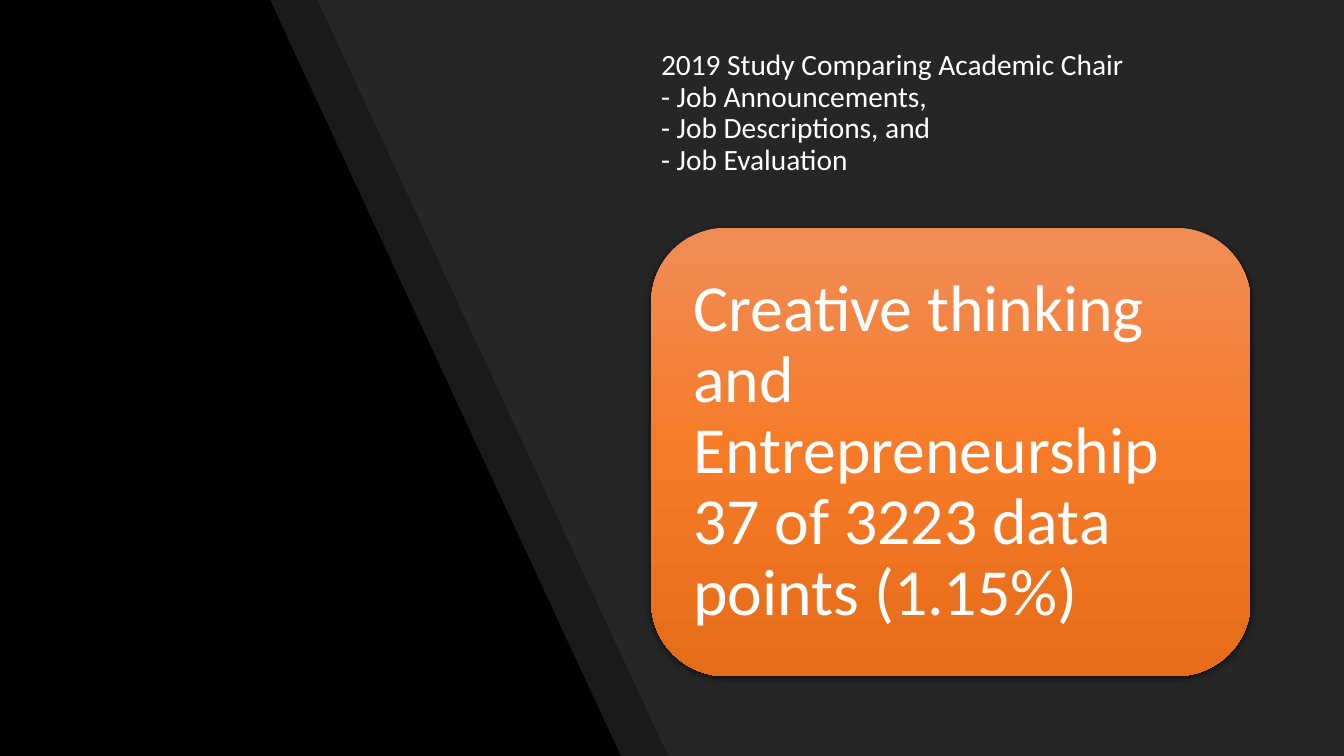
from lxml import etree
from pptx import Presentation
from pptx.dml.color import RGBColor
from pptx.enum.shapes import MSO_SHAPE
from pptx.enum.text import MSO_ANCHOR, PP_ALIGN
from pptx.oxml.ns import qn
from pptx.util import Cm, Pt

ROUNDED = MSO_SHAPE.ROUNDED_RECTANGLE
MIDDLE, LEFT = MSO_ANCHOR.MIDDLE, PP_ALIGN.LEFT

TITLE = [
    "2019 Study Comparing Academic Chair",
    "- Job Announcements,",
    "- Job Descriptions, and",
    "- Job Evaluation",
]
FINDING = [
    "Creative thinking and Entrepreneurship",
    "37 of 3223 data points (1.15%)",
]
FONT, WHITE, BLACK, PANEL = "Calibri", "FFFFFF", "000000", "262626"
CARD_STOPS = [(0, "F18C57"), (50, "F67B28"), (100, "E56C19")]

# Slanted panels: top-left x in cm, opacity in percent
PANELS = [(6.81, 70), (8.0, 100)]
SLANT = 8.84
WIDTH, HEIGHT = 33.87, 19.05
COLUMN_LEFT, COLUMN_WIDTH = 16.41, 15.11


def rgb(color):
    return RGBColor.from_string(color)


def add_xml(parent, tag, **attrs):
    return etree.SubElement(parent, qn(tag), {k: str(v) for k, v in attrs.items()})


def add_panel(slide, left, opacity):
    corners = [(left, 0), (WIDTH, 0), (WIDTH, HEIGHT), (left + SLANT, HEIGHT)]
    points = [(Cm(x), Cm(y)) for x, y in corners]
    builder = slide.shapes.build_freeform(*points[0])
    builder.add_line_segments(points[1:], close=True)
    sp = builder.convert_to_shape()
    sp.shadow.inherit = False
    sp.line.fill.background()
    sp.fill.solid()
    sp.fill.fore_color.rgb = rgb(PANEL)
    if opacity < 100:
        color = sp._element.spPr.find(f"{qn('a:solidFill')}/{qn('a:srgbClr')}")
        add_xml(color, "a:alpha", val=opacity * 1000)


def set_text(sp, lines, size, inset_x, inset_y):
    """Fill the shape with one paragraph whose lines are split by line breaks."""
    tf = sp.text_frame
    tf.word_wrap = True
    tf.vertical_anchor = MIDDLE
    tf.margin_left = tf.margin_right = Cm(inset_x)
    tf.margin_top = tf.margin_bottom = Cm(inset_y)
    p = tf.paragraphs[0]
    p.text = "\v".join(lines)
    p.alignment = LEFT
    p.line_spacing = 0.9
    p.font.name = FONT
    p.font.size = Pt(size)
    p.font.color.rgb = rgb(WHITE)


def style_card(sp):
    """Give the card a downward three-stop gradient and a soft shadow."""
    sp.line.fill.background()
    sp.fill.gradient()
    sp.fill.gradient_angle = 270
    spPr = sp._element.spPr
    stops = spPr.find(f"{qn('a:gradFill')}/{qn('a:gsLst')}")
    for stop in list(stops):
        stops.remove(stop)
    for position, color in CARD_STOPS:
        stop = add_xml(stops, "a:gs", pos=position * 1000)
        add_xml(stop, "a:srgbClr", val=color)
    sp.shadow.inherit = False
    shadow = add_xml(spPr.find(qn("a:effectLst")), "a:outerShdw", blurRad=Pt(4.5),
                     dist=Pt(1.5), dir=90 * 60000, algn="ctr", rotWithShape=0)
    color = add_xml(shadow, "a:srgbClr", val=BLACK)
    add_xml(color, "a:alpha", val=63000)


def main():
    prs = Presentation()
    prs.slide_width, prs.slide_height = Cm(WIDTH), Cm(HEIGHT)
    slide = prs.slides.add_slide(prs.slide_layouts[6])
    slide.background.fill.solid()
    slide.background.fill.fore_color.rgb = rgb(BLACK)

    for left, opacity in PANELS:
        add_panel(slide, left, opacity)

    title = slide.shapes.add_textbox(Cm(COLUMN_LEFT), Cm(1.02), Cm(COLUMN_WIDTH), Cm(3.68))
    set_text(title, TITLE, 21, 0.25, 0.13)

    card = slide.shapes.add_shape(
        ROUNDED, Cm(COLUMN_LEFT), Cm(5.74), Cm(COLUMN_WIDTH), Cm(11.3))
    style_card(card)
    set_text(card, FINDING, 47, 0.51, 0.51)

    prs.save("out.pptx")


if __name__ == "__main__":
    main()
